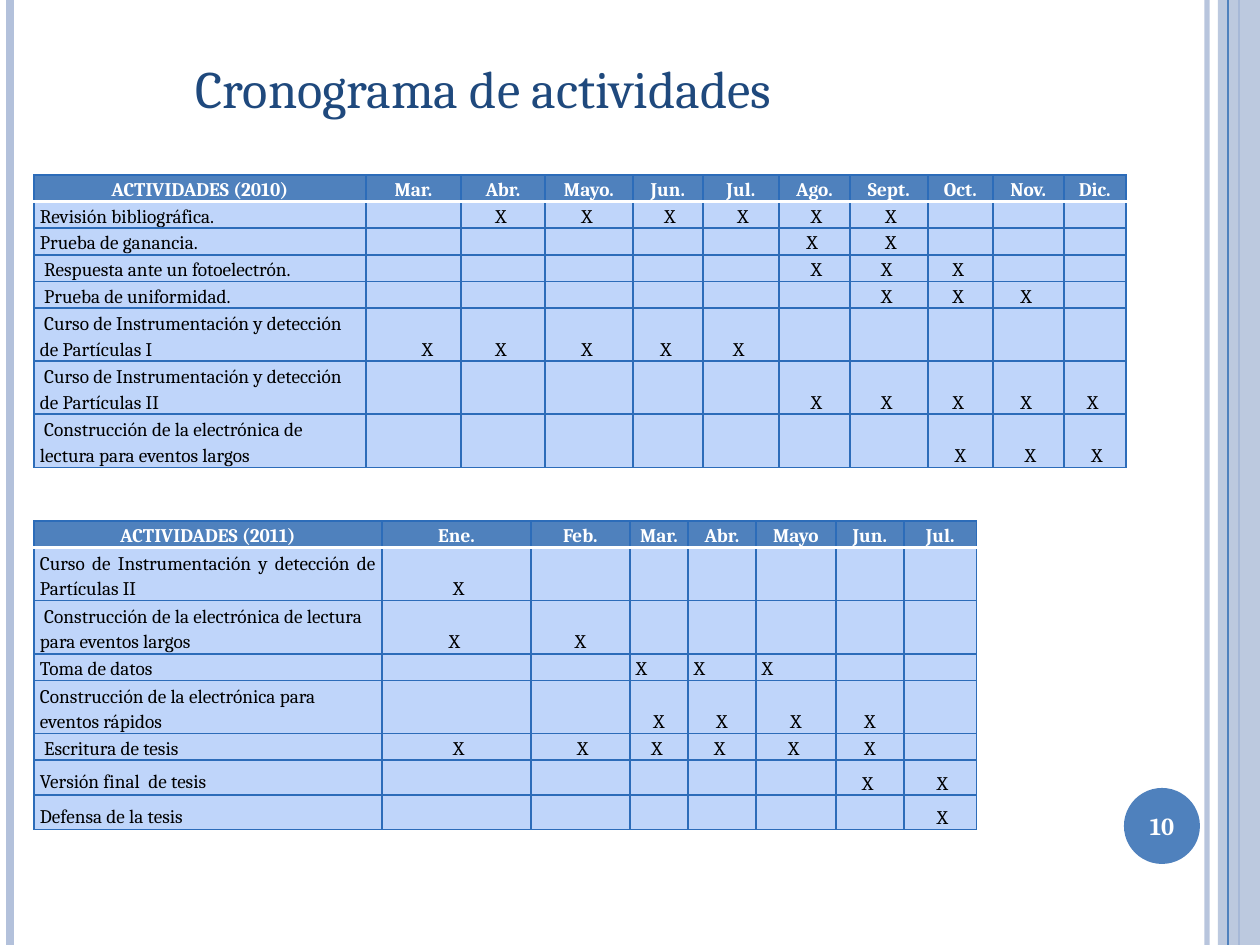
from typing import NamedTuple

from lxml.etree import SubElement
from pptx import Presentation
from pptx.dml.color import RGBColor
from pptx.enum.shapes import MSO_CONNECTOR, MSO_SHAPE
from pptx.enum.text import MSO_ANCHOR as Anchor, MSO_AUTO_SIZE, PP_ALIGN as Align
from pptx.oxml import parse_xml
from pptx.oxml.ns import nsdecls, qn
from pptx.util import Pt

PX = 914400 / 126
WIDTH, HEIGHT = 1260, 945
FONT = "Cambria"
NAVY = RGBColor(0x1F, 0x49, 0x7D)
BLUE = RGBColor(0x4F, 0x81, 0xBD)
PALE_BLUE = RGBColor(0xB3, 0xC1, 0xDB)
CELL_BLUE = RGBColor(0xBF, 0xD5, 0xFA)
GRID_BLUE = RGBColor(0x2C, 0x6C, 0xB9)
WHITE = RGBColor(0xFF, 0xFF, 0xFF)
BLACK = RGBColor(0, 0, 0)

# One code per month: empty, X centred, X nudged left or right, X indented, X at the left
MARKS = {".": "", "=": "X", "<": "X ", ">": " X", "+": "X ", "l": "X"}


class Activity(NamedTuple):
    label: str
    marks: str
    height: int = 26
    align: Align = Align.LEFT
    spacing: float = 1.15


COLUMNS_2010 = [("ACTIVIDADES (2010)", 332), ("Mar.", 95), ("Abr.", 84), ("Mayo.", 88),
                ("Jun.", 70), ("Jul.", 76), ("Ago.", 71), ("Sept.", 78), ("Oct.", 65),
                ("Nov.", 71), ("Dic.", 62)]
ACTIVITIES_2010 = [
    Activity("Revisión bibliográfica.", ".<<>>>>..."),
    Activity("Prueba de ganancia.", ".....<>..."),
    Activity(" Respuesta ante un fotoelectrón.", ".....><<.."),
    Activity(" Prueba de uniformidad.", "......<<<."),
    Activity(" Curso de Instrumentación y detección de Partículas I", "+<<<<.....", 51),
    Activity(" Curso de Instrumentación y detección de Partículas II", ".....><<<<", 51),
    Activity(" Construcción de la electrónica de lectura para eventos largos",
             ".......=>>", 51),
]
COLUMNS_2011 = [("ACTIVIDADES (2011)", 348), ("Ene.", 149), ("Feb.", 99), ("Mar.", 58),
                ("Abr.", 68), ("Mayo", 80), ("Jun.", 68), ("Jul.", 73)]
ACTIVITIES_2011 = [
    Activity("Curso de Instrumentación y detección de Partículas II ", ">......", 51,
             Align.JUSTIFY),
    Activity(" Construcción de la electrónica de lectura para eventos largos", "<=.....", 51),
    Activity("Toma de datos", "..lll.."),
    Activity("Construcción de la electrónica para eventos rápidos", "..====.", 51),
    Activity(" Escritura de tesis", ">><<<=."),
    Activity("Versión final  de tesis", ".....<>", 33, Align.JUSTIFY, 1.5),
    Activity("Defensa de la tesis", "......>", 33, Align.JUSTIFY, 1.5),
]


def px(length):
    return round(length * PX)


def box(*lengths):
    return [px(length) for length in lengths]


def set_alpha(fill_holder, percent):
    color = fill_holder.find(".//" + qn("a:srgbClr"))
    SubElement(color, qn("a:alpha"), val=str(percent * 1000))


def style_text(paragraph, size, color, bold=False, align=Align.LEFT):
    paragraph.alignment = align
    font = paragraph.font
    font.name, font.size, font.bold = FONT, Pt(size), bold
    font.color.rgb = color


def add_rule(slide, x, color, weight, alpha=None):
    """Draw a vertical line over the full height of the slide."""
    rule = slide.shapes.add_connector(MSO_CONNECTOR.STRAIGHT, *box(x, 0, x, HEIGHT))
    rule.line.color.rgb = color
    rule.line.width = Pt(weight)
    if alpha:
        set_alpha(rule.line._get_or_add_ln(), alpha)
    SubElement(rule._element.spPr, qn("a:effectLst"))


def add_plain_shape(slide, kind, bounds, color):
    shape = slide.shapes.add_shape(kind, *box(*bounds))
    shape.shadow.inherit = False
    shape.fill.solid()
    shape.fill.fore_color.rgb = color
    shape.line.fill.background()
    return shape


def add_side_bands(slide):
    add_rule(slide, 1207, PALE_BLUE, 3, alpha=93)
    add_rule(slide, 10, PALE_BLUE, 4.5)
    add_rule(slide, 1239, BLUE, 1.5)
    band = add_plain_shape(slide, MSO_SHAPE.RECTANGLE, (1218, 0, WIDTH - 1218, HEIGHT),
                           PALE_BLUE)
    set_alpha(band._element.spPr, 87)
    add_rule(slide, 1228, BLUE, 0.75)


def add_page_number(slide, left, top, diameter, number):
    add_plain_shape(slide, MSO_SHAPE.OVAL, (left, top, diameter, diameter), BLUE)
    label = slide.shapes.add_textbox(*box(left - 4, top + 2, diameter + 8, diameter - 4))
    frame = label.text_frame
    frame.word_wrap = True
    frame.vertical_anchor = Anchor.MIDDLE
    frame.text = number
    style_text(frame.paragraphs[0], 14, WHITE, True, Align.CENTER)


def set_title(slide, left, top, width, height, text):
    title = slide.shapes.title
    title.left, title.top, title.width, title.height = box(left, top, width, height)
    frame = title.text_frame
    frame.text = text
    frame.vertical_anchor = Anchor.TOP
    frame.auto_size = MSO_AUTO_SIZE.NONE
    style_text(frame.paragraphs[0], 30, NAVY)


def set_borders(cell, top, bottom):
    edges = [("L", GRID_BLUE, 1), ("R", GRID_BLUE, 1), ("T", *top), ("B", *bottom)]
    properties = cell._tc.get_or_add_tcPr()
    for position, (side, color, weight) in enumerate(edges):
        properties.insert(position, parse_xml(
            f'<a:ln{side} {nsdecls("a")} w="{Pt(weight)}"><a:solidFill>'
            f'<a:srgbClr val="{color}"/></a:solidFill></a:ln{side}>'))


def fill_cell(cell, text, header=False, align=Align.CENTER, spacing=1.15):
    cell.margin_left = cell.margin_right = px(6)
    cell.margin_top = cell.margin_bottom = 0
    cell.vertical_anchor = Anchor.BOTTOM if spacing == 1.15 else Anchor.TOP
    cell.fill.solid()
    cell.fill.fore_color.rgb = BLUE if header else CELL_BLUE
    cell.text = text
    paragraph = cell.text_frame.paragraphs[0]
    paragraph.line_spacing = spacing
    style_text(paragraph, 11, WHITE if header else BLACK, header, align)
    if not text:
        SubElement(paragraph._p, qn("a:endParaRPr"), sz="1100")
    return paragraph


def add_schedule(slide, left, top, columns, activities):
    heights = [26] + [activity.height for activity in activities]
    total_width = sum(width for _, width in columns)
    table = slide.shapes.add_table(len(heights), len(columns),
                                   *box(left, top, total_width, sum(heights))).table
    for row, height in zip(table.rows, heights):
        row.height = px(height)
    for index, (heading, width) in enumerate(columns):
        table.columns[index].width = px(width)
        fill_cell(table.cell(0, index), heading, header=True)
    for row, activity in enumerate(activities, 1):
        fill_cell(table.cell(row, 0), activity.label, align=activity.align,
                  spacing=activity.spacing)
        for column, code in enumerate(activity.marks, 1):
            align = Align.LEFT if code == "l" else Align.CENTER
            mark = fill_cell(table.cell(row, column), MARKS[code], align=align)
            if code == "+":
                mark._p.get_or_add_pPr().set("indent", str(px(32)))
    grid, header_rule = (GRID_BLUE, 1), (WHITE, 2)
    for row in range(len(heights)):
        for column in range(len(columns)):
            set_borders(table.cell(row, column),
                        top=header_rule if row == 1 else grid,
                        bottom=header_rule if row == 0 else grid)


def main():
    deck = Presentation()
    deck.slide_width, deck.slide_height = box(WIDTH, HEIGHT)
    slide = deck.slides.add_slide(deck.slide_layouts[5])
    add_side_bands(slide)
    add_page_number(slide, 1124, 788, 76, "10")
    add_schedule(slide, 34, 175, COLUMNS_2010, ACTIVITIES_2010)
    add_schedule(slide, 34, 521, COLUMNS_2011, ACTIVITIES_2011)
    set_title(slide, 183, 50, 645, 77, "Cronograma de actividades")
    deck.save("out.pptx")


if __name__ == "__main__":
    main()
